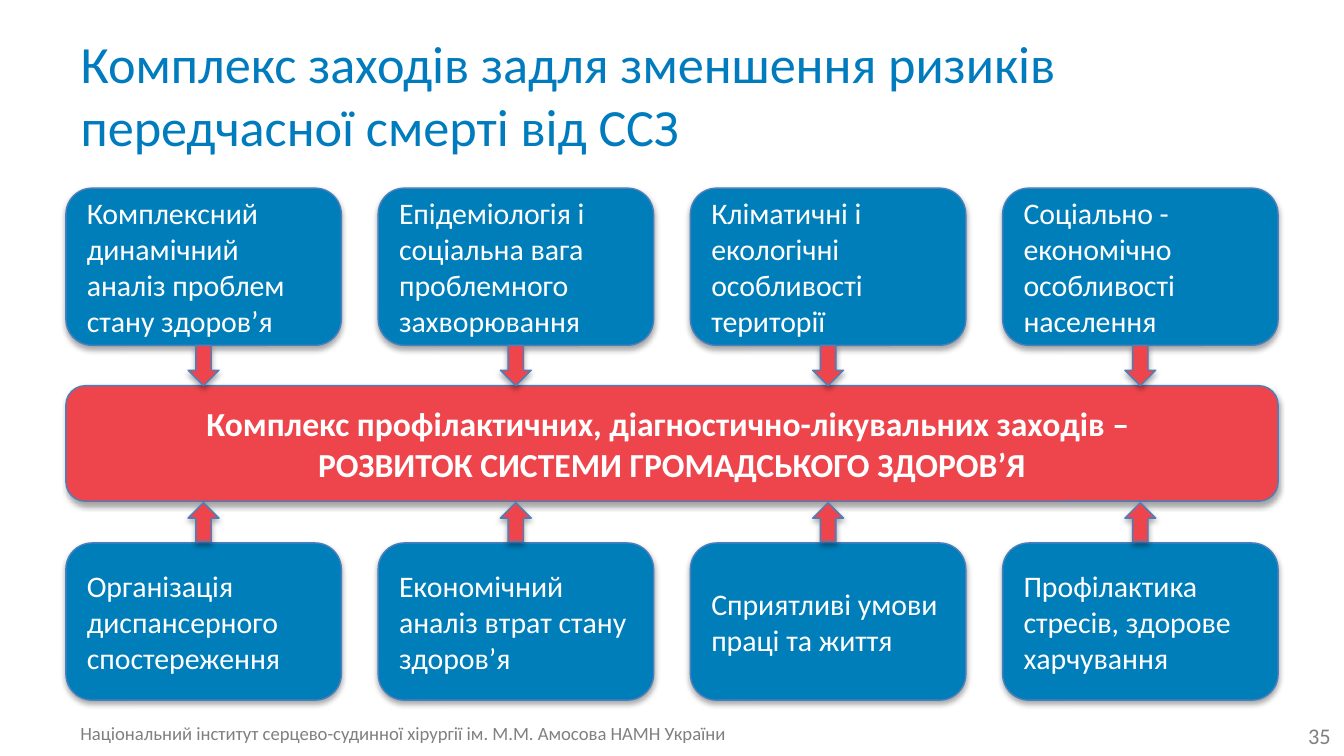
from lxml.etree import SubElement
from pptx import Presentation
from pptx.dml.color import RGBColor
from pptx.enum.shapes import MSO_SHAPE as Shape
from pptx.enum.text import MSO_ANCHOR as Anchor, PP_ALIGN as Align
from pptx.oxml.ns import qn
from pptx.util import Inches, Pt

WIDTH = 10
HEIGHT = WIDTH * 9 / 16
LEFT, SPAN = 0.49, 9.02
COLUMNS, BOX_W, BOX_H = 4, 2.05, 1.17
PITCH = (SPAN - BOX_W) / (COLUMNS - 1)
TOP_ROW, BANNER_TOP, BANNER_H, BOTTOM_ROW = 1.4, 2.87, 0.86, 4.04
ARROW_W = 0.23
BLUE, RED, OUTLINE = "007EBA", "EE454C", "4B7EBC"
TITLE_BLUE, GRAY, WHITE = "007BBE", "808080", "FFFFFF"

FACTORS = [
    "Комплексний динамічний аналіз проблем стану здоров’я",
    "Епідеміологія і соціальна вага проблемного захворювання",
    "Кліматичні і екологічні особливості території",
    "Соціально - економічно особливості населення",
]
MEASURES = [
    "Організація диспансерного спостереження",
    "Економічний аналіз втрат стану здоров’я",
    "Сприятливі умови праці та життя",
    "Профілактика стресів, здорове харчування",
]
BANNER = [
    "Комплекс профілактичних, діагностично-лікувальних заходів – ",
    "РОЗВИТОК СИСТЕМИ ГРОМАДСЬКОГО ЗДОРОВ’Я",
]


def color(code):
    return RGBColor.from_string(code)


def write(box, lines, size, code, align=Align.LEFT, anchor=Anchor.MIDDLE, bold=False):
    frame = box.text_frame
    frame.word_wrap = True
    frame.vertical_anchor = anchor
    frame.text = "\n".join(lines)
    for para in frame.paragraphs:
        para.alignment = align
        font = para.font
        font.name, font.size, font.bold = "Calibri", Pt(size), bold
        font.color.rgb = color(code)


def add_shadow(shape):
    """Give the shape a soft shadow that falls straight down."""
    shape.shadow.inherit = False
    effects = shape._element.spPr.find(qn("a:effectLst"))
    shadow = SubElement(effects, qn("a:outerShdw"), blurRad=str(Pt(3.1)),
                        dist=str(Pt(1.8)), dir="5400000", rotWithShape="0")
    black = SubElement(shadow, qn("a:srgbClr"), val="000000")
    SubElement(black, qn("a:alpha"), val="35000")


def add_block(page, kind, left, top, width, height, fill):
    block = page.shapes.add_shape(kind, *map(Inches, (left, top, width, height)))
    block.fill.solid()
    block.fill.fore_color.rgb = color(fill)
    block.line.color.rgb = color(OUTLINE)
    block.line.width = Pt(0.75)
    add_shadow(block)
    return block


def add_row(page, texts, top):
    for column, text in enumerate(texts):
        box = add_block(page, Shape.ROUNDED_RECTANGLE, LEFT + column * PITCH, top,
                        BOX_W, BOX_H, BLUE)
        write(box, [text], 16, WHITE)


def add_arrows(page, kind, top, height):
    for column in range(COLUMNS):
        left = LEFT + column * PITCH + (BOX_W - ARROW_W) / 2
        add_block(page, kind, left, top, ARROW_W, height, RED)


def add_banner(page):
    banner = add_block(page, Shape.ROUNDED_RECTANGLE, LEFT, BANNER_TOP, SPAN, BANNER_H, RED)
    write(banner, BANNER, 18, WHITE, Align.CENTER, bold=True)


def add_note(page, text, area, size, align, anchor):
    box = page.shapes.add_textbox(*map(Inches, area))
    write(box, [text], size, GRAY, align, anchor)


def set_title(page, text):
    title = page.shapes.title
    title.left, title.top, title.width, title.height = map(Inches, (0.5, 0.23, 8.25, 0.94))
    write(title, [text], 28, TITLE_BLUE)


def main():
    deck = Presentation()
    deck.slide_width, deck.slide_height = Inches(WIDTH), Inches(HEIGHT)
    page = deck.slides.add_slide(deck.slide_layouts[5])
    set_title(page, "Комплекс заходів задля зменшення ризиків передчасної смерті від ССЗ")
    add_note(page, "Національний інститут серцево-судинної хірургії ім. М.М. Амосова НАМН України",
             (0.5, 5.32, 5.33, 0.27), 10, Align.LEFT, Anchor.TOP)
    add_note(page, "35", (7.67, 5.32, 2.33, 0.3), 12, Align.RIGHT, Anchor.MIDDLE)
    add_row(page, FACTORS, TOP_ROW)
    add_banner(page)
    add_row(page, MEASURES, BOTTOM_ROW)
    add_arrows(page, Shape.DOWN_ARROW, TOP_ROW + BOX_H, 0.3)
    add_arrows(page, Shape.UP_ARROW, 3.74, 0.29)
    deck.save("out.pptx")


if __name__ == "__main__":
    main()
